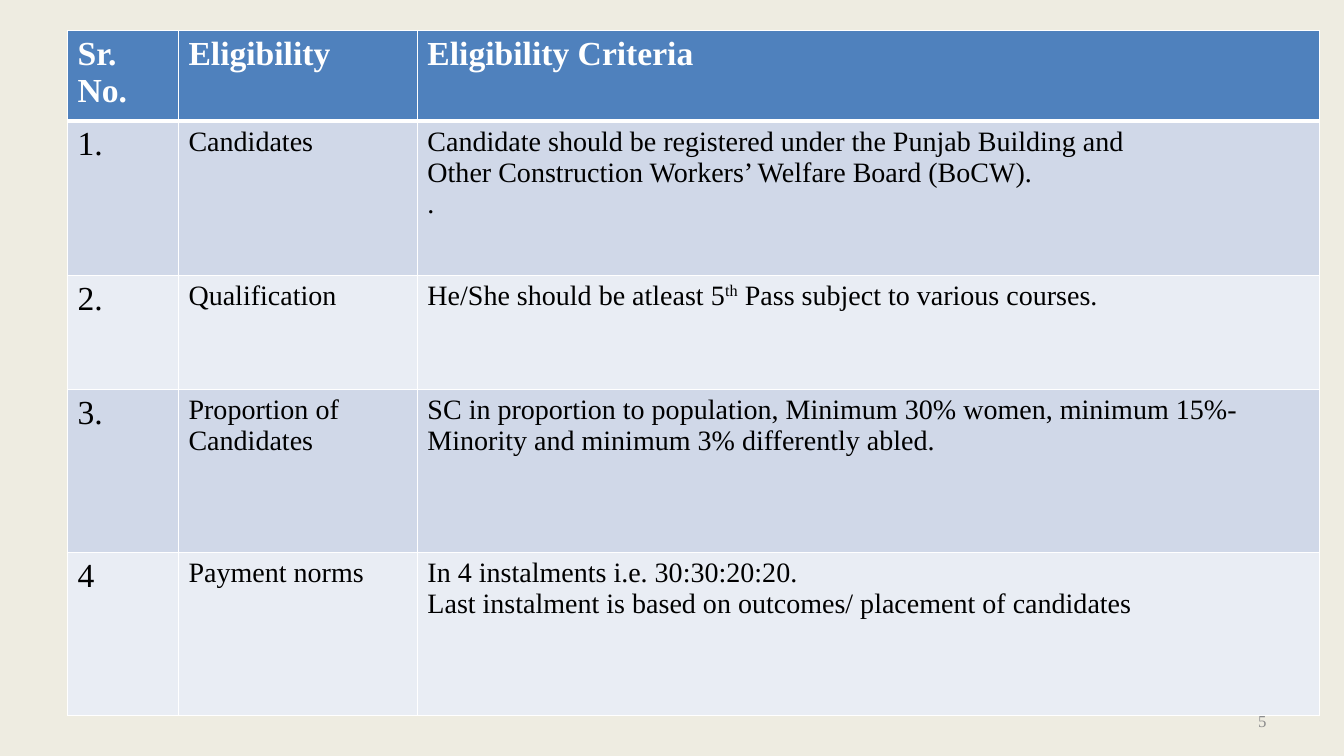
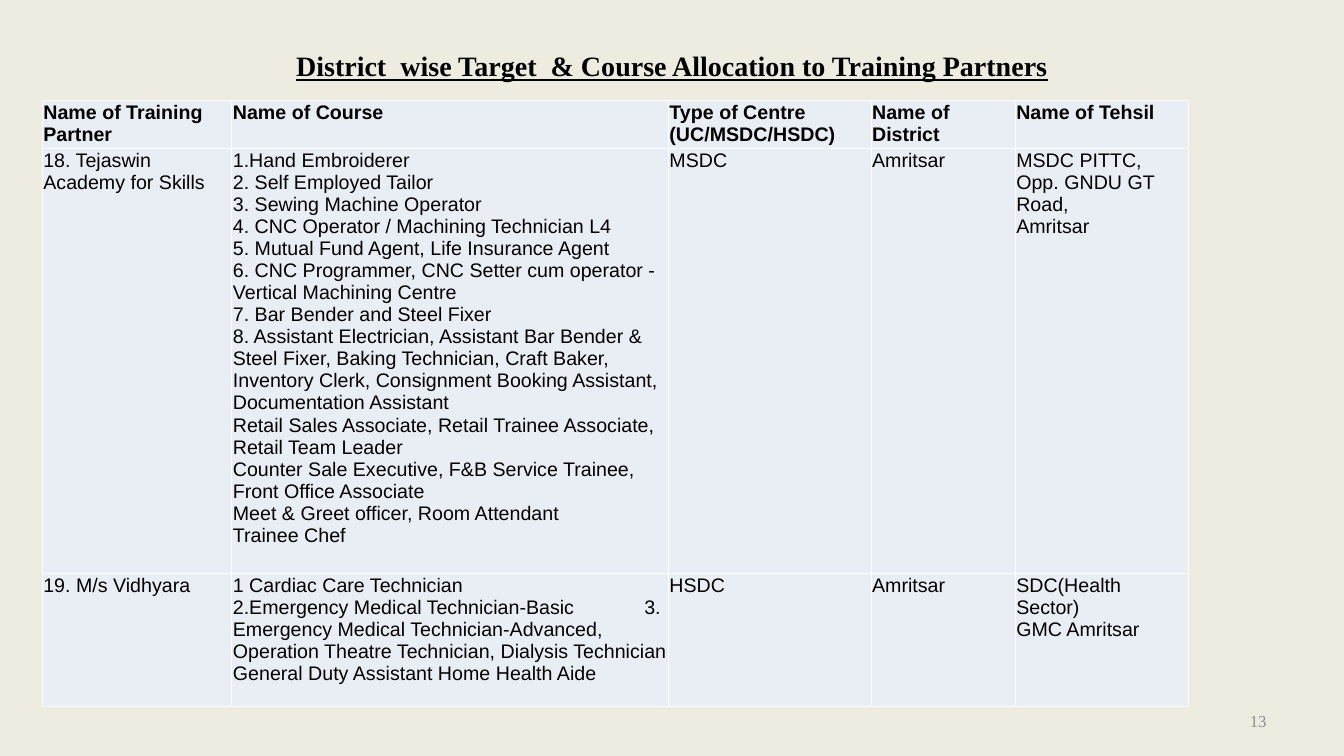
from lxml import etree
from pptx import Presentation
from pptx import util as u
from pptx.dml.color import RGBColor
from pptx.enum import text as t
from pptx.oxml.ns import qn

SAND = RGBColor(0xEE, 0xEC, 0xE1)
BLUE = RGBColor(0x4F, 0x81, 0xBD)
DARK = RGBColor(0xD0, 0xD8, 0xE8)
PALE = RGBColor(0xE9, 0xED, 0xF4)
WHITE = RGBColor(0xFF, 0xFF, 0xFF)
BLACK = RGBColor(0, 0, 0)
GREY = RGBColor(0x8C, 0x8C, 0x8C)
SERIF, SANS = "Times New Roman", "Arial"
WIDE, HIGH = 13.33, 7.5
MARGIN = 0.67

RULES = [
    ("Sr. No.", "Eligibility", "Eligibility Criteria"),
    ("1.", "Candidates",
     "Candidate should be registered under the Punjab Building and\n"
     "Other Construction Workers’ Welfare Board (BoCW).\n."),
    ("2.", "Qualification",
     "He/She should be atleast 5^th^ Pass subject to various courses."),
    ("3.", "Proportion of Candidates",
     "SC in proportion to population, Minimum 30% women, minimum 15%- "
     "Minority and minimum 3% differently abled."),
    ("4", "Payment norms",
     "In 4 instalments i.e. 30:30:20:20.\n"
     "Last instalment is based on outcomes/ placement of candidates"),
]

COURSES = [
    ("Name of Training Partner", "Name of Course",
     "Type of Centre\n(UC/MSDC/HSDC)", "Name of District", "Name of Tehsil"),
    ("18. Tejaswin Academy for Skills",
     "1.Hand Embroiderer\n"
     "2. Self Employed Tailor\n"
     "3. Sewing Machine Operator\n"
     "4. CNC Operator / Machining Technician L4\n"
     "5. Mutual Fund Agent, Life Insurance Agent\n"
     "6. CNC Programmer, CNC Setter cum operator - Vertical Machining Centre\n"
     "7. Bar Bender and Steel Fixer\n"
     "8. Assistant Electrician, Assistant Bar Bender & Steel Fixer, "
     "Baking Technician, Craft Baker, Inventory Clerk, "
     "Consignment Booking Assistant, Documentation Assistant\n"
     "Retail Sales Associate, Retail Trainee Associate, Retail Team Leader\n"
     "Counter Sale Executive, F&B Service Trainee, Front Office Associate\n"
     "Meet & Greet officer, Room Attendant\n"
     "Trainee Chef",
     "MSDC", "Amritsar", "MSDC PITTC,\nOpp. GNDU GT Road,\nAmritsar"),
    ("19. M/s Vidhyara",
     "1 Cardiac Care Technician\n"
     "2.Emergency Medical Technician-Basic\t3. "
     "Emergency Medical Technician-Advanced, Operation Theatre Technician, "
     "Dialysis Technician General Duty Assistant Home Health Aide",
     "HSDC", "Amritsar", "SDC(Health Sector)\nGMC Amritsar"),
]


def write(frame, words, size=20, font=SERIF, color=BLACK, bold=False,
          line=False, align=t.PP_ALIGN.LEFT, tab=4.08):
    frame.word_wrap = True
    for i, row in enumerate(words.split("\n")):
        para = frame.paragraphs[0] if i == 0 else frame.add_paragraph()
        para.alignment = align
        if "\t" in row:
            stops = etree.SubElement(para._p.get_or_add_pPr(), qn("a:tabLst"))
            etree.SubElement(stops, qn("a:tab"), pos=str(u.Inches(tab)), algn="l")
        for j, part in enumerate(row.split("^")):
            run = para.add_run()
            run.text = part
            face = run.font
            face.size, face.name, face.bold = u.Pt(size), font, bold
            face.underline = line
            face.color.rgb = color
            if j % 2:
                run._r.get_or_add_rPr().set("baseline", "30000")


def label(slide, words, x, y, w, h, **form):
    frame = slide.shapes.add_textbox(*map(u.Inches, (x, y, w, h))).text_frame
    frame.vertical_anchor = t.MSO_ANCHOR.MIDDLE
    write(frame, words, **form)


def border(cell, widths):
    props = cell._tc.get_or_add_tcPr()
    for side, width in zip("LRTB", widths):
        edge = etree.SubElement(props, qn("a:ln" + side), w=str(u.Pt(width)))
        fill = etree.SubElement(edge, qn("a:solidFill"))
        etree.SubElement(fill, qn("a:srgbClr"), val=str(WHITE))


def grid(slide, data, x, y, cols, rows, look, inset=None, head=1):
    size = map(u.Inches, (x, y, sum(cols), sum(rows)))
    table = slide.shapes.add_table(len(rows), len(cols), *size).table
    table.first_row = table.horz_banding = False
    for col, width in zip(table.columns, cols):
        col.width = u.Inches(width)
    for row, height in zip(table.rows, rows):
        row.height = u.Inches(height)
    for r, line in enumerate(data):
        for c, words in enumerate(line):
            cell = table.cell(r, c)
            if inset is not None:
                cell.margin_left = cell.margin_right = u.Inches(inset)
                cell.margin_top, cell.margin_bottom = u.Inches(inset), 0
            border(cell, (1, 1, head if r == 1 else 1, head if r == 0 else 1))
            fill, form = look(r, c)
            cell.fill.solid()
            cell.fill.fore_color.rgb = fill
            write(cell.text_frame, words, **form)


def rule_look(r, c):
    if r == 0:
        return BLUE, dict(size=24, color=WHITE, bold=True)
    return (DARK if r % 2 else PALE), dict(size=20 if c else 24)


def course_look(r, c):
    return PALE, dict(size=14, font=SANS, bold=r == 0)


def page(deck, number):
    slide = deck.slides.add_slide(deck.slide_layouts[6])
    slide.background.fill.solid()
    slide.background.fill.fore_color.rgb = SAND
    wide = 3.11
    label(slide, str(number), WIDE - MARGIN - wide, 6.95, wide, 0.4,
          size=12, color=GREY, align=t.PP_ALIGN.RIGHT)
    return slide


def main():
    deck = Presentation()
    deck.slide_width, deck.slide_height = u.Inches(WIDE), u.Inches(HIGH)

    slide = page(deck, 5)
    grid(slide, RULES, MARGIN, 0.3, (1.1, 2.37, 8.95),
         (0.88, 1.53, 1.13, 1.62, 1.62), rule_look, head=3)

    slide = page(deck, 13)
    label(slide, "District  wise Target  & Course Allocation to Training Partners",
          MARGIN, 0.3, WIDE - 2 * MARGIN, 0.7,
          bold=True, line=True, align=t.PP_ALIGN.CENTER)
    grid(slide, COURSES, 0.42, 1, (1.88, 4.33, 2.01, 1.43, 1.72),
         (0.46, 4.18, 1.32), course_look, inset=0.01)

    deck.save("out.pptx")


if __name__ == "__main__":
    main()
